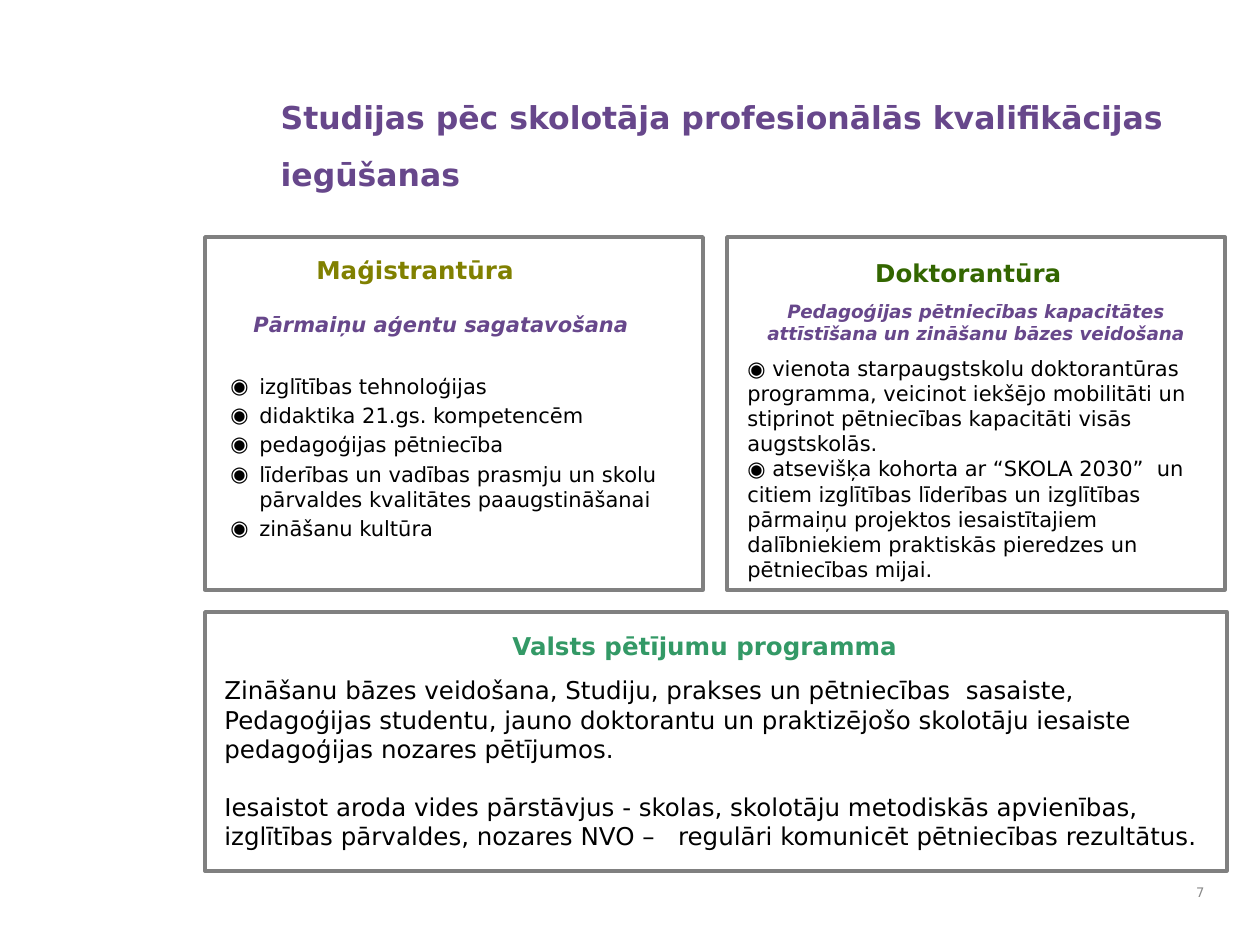
"""Build the slide on studies after the teacher's professional qualification."""
from lxml import etree
from pptx import Presentation, util as u
from pptx.dml.color import RGBColor
from pptx.enum import shapes, text
from pptx.oxml.ns import qn

PX = 914400 / 126
FONT = "DejaVu Sans"
COLOURS = {"purple": "67478B", "olive": "808000", "forest": "336600", "green": "339966",
           "black": "000000", "number": "898989", "frame": "808080"}
ALIGN = text.PP_ALIGN
LEFT, CENTER, RIGHT = ALIGN.LEFT, ALIGN.CENTER, ALIGN.RIGHT
INSETS = {"margin_left": 0.1, "margin_right": 0.1, "margin_top": 0.05, "margin_bottom": 0.05}

TITLE = "Studijas pēc skolotāja profesionālās kvalifikācijas iegūšanas"
MASTER_TOPICS = [
    "izglītības tehnoloģijas",
    "didaktika 21.gs. kompetencēm",
    "pedagoģijas pētniecība",
    "līderības un vadības prasmju un skolu pārvaldes kvalitātes paaugstināšanai",
    "zināšanu kultūra",
]
DOCTORAL_POINTS = [
    "◉ vienota starpaugstskolu doktorantūras programma, veicinot iekšējo mobilitāti un "
    "stiprinot pētniecības kapacitāti visās augstskolās.",
    "◉ atsevišķa kohorta ar “SKOLA 2030”  un citiem izglītības līderības un izglītības "
    "pārmaiņu projektos iesaistītajiem dalībniekiem praktiskās pieredzes un pētniecības mijai.",
]
PROGRAMME = [
    "Zināšanu bāzes veidošana, Studiju, prakses un pētniecības  sasaiste, Pedagoģijas studentu, "
    "jauno doktorantu un praktizējošo skolotāju iesaiste pedagoģijas nozares pētījumos.",
    "Iesaistot aroda vides pārstāvjus - skolas, skolotāju metodiskās apvienības, izglītības "
    "pārvaldes, nozares NVO –   regulāri komunicēt pētniecības rezultātus.",
]
HEADING = {"bold": True}
SUBTITLE = {"bold": True, "italic": True}
TEXTS = [
    {"box": (218, 367, 470, 178), "lines": MASTER_TOPICS, "size": 12, "gap": 2.4, "bullet": "◉"},
    {"box": (1176, 872, 41, 41), "lines": ["7"], "size": 7.5, "colour": "number",
     "align": RIGHT, "anchor": text.MSO_ANCHOR.MIDDLE},
    {"box": (304, 249, 239, 43), "lines": ["Maģistrantūra"], "size": 14, "colour": "olive",
     "style": HEADING},
    {"box": (861, 252, 213, 43), "lines": ["Doktorantūra"], "size": 14, "colour": "forest",
     "align": RIGHT, "style": HEADING, "wrap": False},
    {"box": (751, 294, 450, 57),
     "lines": ["Pedagoģijas pētniecības kapacitātes attīstīšana un zināšanu bāzes veidošana"],
     "size": 10.5, "colour": "purple", "align": CENTER, "style": SUBTITLE},
    {"box": (500, 625, 470, 40), "lines": ["Valsts pētījumu programma"], "size": 14,
     "colour": "green", "style": HEADING},
    {"box": (212, 669, 1019, 190), "lines": PROGRAMME, "size": 14, "gap": 16.3},
    {"box": (735, 349, 493, 242), "lines": DOCTORAL_POINTS, "size": 12},
    {"box": (237, 305, 408, 38), "lines": ["Pārmaiņu aģentu sagatavošana"], "size": 12,
     "colour": "purple", "align": CENTER, "style": SUBTITLE, "wrap": False},
]
FRAMES = [(727, 237, 498, 353), (205, 237, 498, 353), (205, 612, 1022, 259)]


def px(*lengths):
    return [u.Emu(round(length * PX)) for length in lengths]


def set_all(target, values):
    for name, value in values.items():
        setattr(target, name, value)


def add_bullet(paragraph, symbol, indent=29):
    properties = paragraph._p.get_or_add_pPr()
    hang = px(indent)[0]
    properties.set("marL", str(hang))
    properties.set("indent", str(-hang))
    etree.SubElement(properties, qn("a:buFont"), typeface=FONT)
    etree.SubElement(properties, qn("a:buChar"), char=symbol)


def fill_text(shape, lines, size, colour="black", align=LEFT, gap=0, bullet=None,
              style=None, wrap=True, anchor=text.MSO_ANCHOR.TOP, spacing=None):
    frame = shape.text_frame
    set_all(frame, {"word_wrap": wrap, "vertical_anchor": anchor,
                    "auto_size": text.MSO_AUTO_SIZE.NONE})
    set_all(frame, {name: u.Inches(value) for name, value in INSETS.items()})
    frame.text = "\n".join(lines)
    for index, paragraph in enumerate(frame.paragraphs):
        set_all(paragraph, {"alignment": align, "space_before": u.Pt(gap if index else 0)})
        if spacing:
            paragraph.line_spacing = spacing
        if bullet:
            add_bullet(paragraph, bullet)
        for run in paragraph.runs:
            set_all(run.font, {"name": FONT, "size": u.Pt(size), **(style or {})})
            run.font.color.rgb = RGBColor.from_string(COLOURS[colour])


def add_frame(slide, box):
    shape = slide.shapes.add_shape(shapes.MSO_SHAPE.RECTANGLE, *px(*box))
    shape.shadow.inherit = False
    shape.fill.background()
    shape.line.width = u.Pt(2)
    shape.line.color.rgb = RGBColor.from_string(COLOURS["frame"])


def main():
    presentation = Presentation()
    presentation.slide_width, presentation.slide_height = px(1260, 945)
    slide = presentation.slides.add_slide(presentation.slide_layouts[5])
    title = slide.shapes.title
    set_all(title, dict(zip(("left", "top", "width", "height"), px(268, 73, 949, 116))))
    fill_text(title, [TITLE], 18, "purple", style=HEADING, spacing=1.5)
    for item in TEXTS:
        options = dict(item)
        fill_text(slide.shapes.add_textbox(*px(*options.pop("box"))), **options)
    for box in FRAMES:
        add_frame(slide, box)
    presentation.save("out.pptx")


if __name__ == "__main__":
    main()
